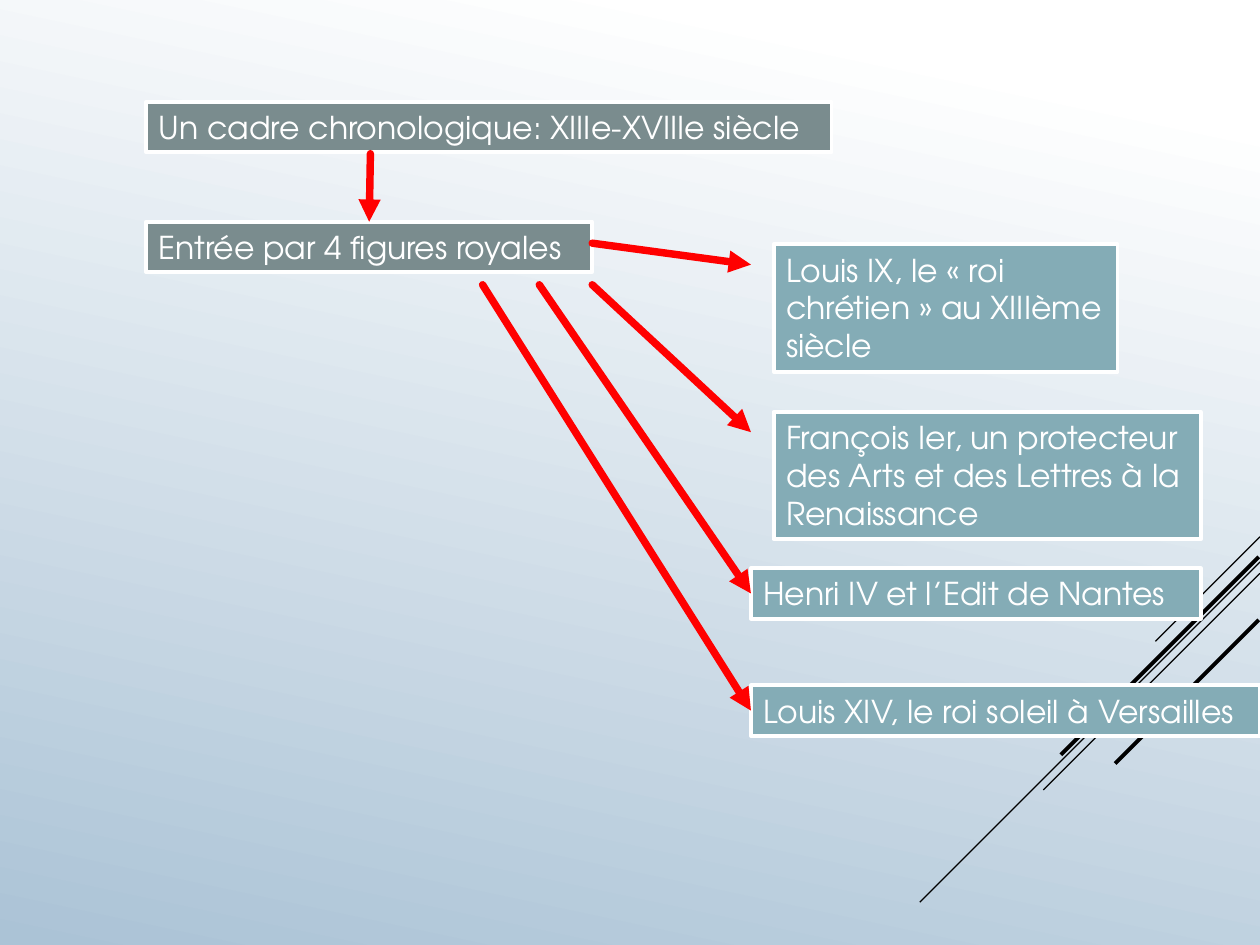
from lxml import etree
from pptx import Presentation
from pptx import util as u
from pptx.dml.color import RGBColor
from pptx.enum import shapes, text
from pptx.oxml.ns import qn

FONT = "TeX Gyre Adventor"
GREY, TEAL, WHITE, BLACK, RED = "7A8C8E", "84ACB6", "FFFFFF", "000000", "FF0000"
TOP, LEFT = 0, 1  # connection sites of a rectangle

# Content: name, text, fill, (left, top, width, height)
BOXES = [
    ("frame", "Un cadre chronologique: XIIIe-XVIIIe siècle", GREY, (1.16, 0.81, 5.44, 0.4)),
    ("entry", "Entrée par 4 figures royales", GREY, (1.16, 1.76, 3.54, 0.4)),
    ("louis_ix", "Louis IX, le «\u00a0roi chrétien\u00a0» au XIIIème siècle", TEAL, (6.14, 1.94, 2.73, 1.01)),
    ("francois", "François Ier, un protecteur des Arts et des Lettres à la Renaissance", TEAL,
     (6.14, 3.27, 3.39, 1.01)),
    ("henri", "Henri IV et l’Edit de Nantes", TEAL, (5.96, 4.51, 3.57, 0.4)),
    ("louis_xiv", "Louis XIV, le roi soleil à Versailles", TEAL, (5.96, 5.44, 4.04, 0.4)),
]
# Arrows: start, end, and the (box, site) joined at the end, if any
ARROWS = [
    ((2.94, 1.22), (2.93, 1.76), ("entry", TOP)),
    ((3.83, 2.26), (5.96, 5.64), ("louis_xiv", LEFT)),
    ((4.28, 2.26), (5.96, 4.71), ("henri", LEFT)),
    ((4.7, 2.26), (5.96, 3.43), None),
    ((4.7, 1.93), (5.96, 2.1), None),
]
# Corner strokes at 45 degrees: right end, horizontal run, line width
STROKES = [
    ((10, 4.26), 0.83, 0.75),
    ((10, 4.46), 2.7, 0.75),
    ((10, 4.55), 1.72, 0.75),
    ((9.99, 4.42), 1.57, 2.25),
    ((9.99, 4.92), 1.14, 2.25),
]


def color(value):
    return RGBColor.from_string(value)


def add_line(page, start, end, value, width):
    line = page.shapes.add_connector(
        shapes.MSO_CONNECTOR.STRAIGHT, *(u.Inches(v) for v in (*start, *end)))
    line.line.color.rgb = color(value)
    line.line.width = u.Pt(width)
    etree.SubElement(line._element.spPr, qn("a:effectLst"))
    return line


def add_arrow(page, start, end):
    arrow = add_line(page, start, end, RED, 4.25)
    outline = arrow.line._get_or_add_ln()
    outline.set("cap", "rnd")
    etree.SubElement(outline, qn("a:tailEnd"), type="triangle")
    return arrow


def add_box(page, words, fill, place):
    box = page.shapes.add_shape(
        shapes.MSO_SHAPE.RECTANGLE, *(u.Inches(v) for v in place))
    box.shadow.inherit = False
    box.fill.solid()
    box.fill.fore_color.rgb = color(fill)
    box.line.color.rgb = color(WHITE)
    box.line.width = u.Pt(2.25)
    frame = box.text_frame
    frame_format = {"word_wrap": True, "vertical_anchor": text.MSO_ANCHOR.TOP,
                    "auto_size": text.MSO_AUTO_SIZE.SHAPE_TO_FIT_TEXT}
    for name, value in frame_format.items():
        setattr(frame, name, value)
    para = frame.paragraphs[0]
    para.alignment = text.PP_ALIGN.LEFT
    span = para.add_run()
    span.text = words
    for name, value in {"name": FONT, "size": u.Pt(18)}.items():
        setattr(span.font, name, value)
    span.font.color.rgb = color(WHITE)
    return box


def main():
    deck = Presentation()
    deck.slide_width, deck.slide_height = u.Inches(10), u.Inches(7.5)
    page = deck.slides.add_slide(deck.slide_layouts[6])

    # Background gradient; the angle runs counter-clockwise
    background = page.background.fill
    background.gradient()
    background.gradient_angle = 360 - 102
    for stop, (position, value) in zip(background.gradient_stops, [(0.1, WHITE), (1, "ABC3D6")]):
        stop.position = position
        stop.color.rgb = color(value)

    # Corner strokes
    for (x, y), run, width in STROKES:
        add_line(page, (x, y), (x - run, y + run), BLACK, width)

    # Boxes, then the arrows between them
    boxes = {name: add_box(page, *rest) for name, *rest in BOXES}
    for start, end, joint in ARROWS:
        arrow = add_arrow(page, start, end)
        if joint:
            name, site = joint
            arrow.end_connect(boxes[name], site)

    deck.save("out.pptx")


if __name__ == "__main__":
    main()
